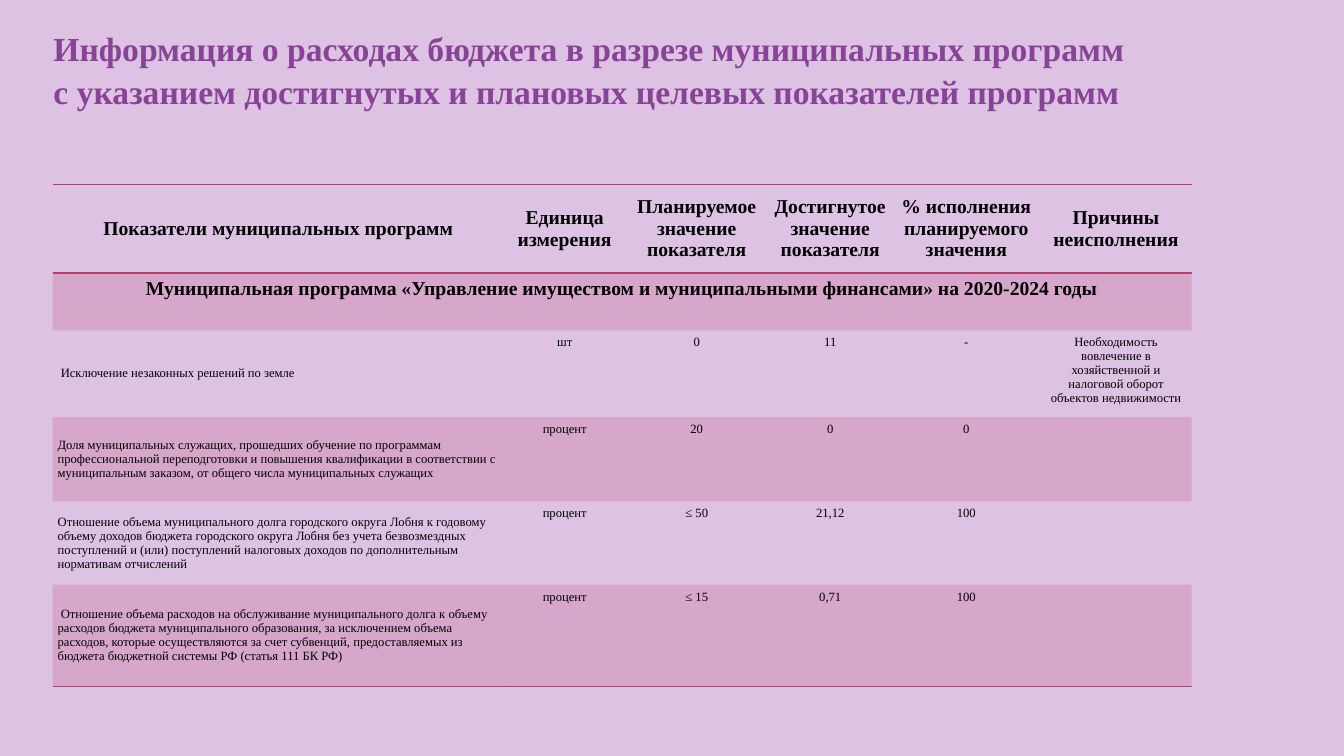
from dataclasses import dataclass

from lxml.etree import SubElement
from pptx import Presentation
from pptx.dml.color import RGBColor
from pptx.enum.text import MSO_ANCHOR, MSO_AUTO_SIZE, PP_ALIGN
from pptx.oxml.ns import qn
from pptx.util import Pt

COLORS = {"bg": "DEC2E4", "title": "874396", "text": "000000", "accent": "B83D68"}
FONT = "Times New Roman"
NO_STYLE = "{2D5ABB26-0587-4C30-8999-92F81FD0307C}"
COL_WIDTHS = (322.6, 86.4, 102.2, 88.6, 105.8, 108)


@dataclass
class Row:
    height: float
    texts: tuple[str, ...]
    heading: bool = False
    shaded: bool = False
    borders: tuple[str, ...] = ()


ROWS = [
    Row(63.4, ("Показатели муниципальных программ", "Единица измерения",
               "Планируемое значение показателя", "Достигнутое значение показателя",
               "% исполнения планируемого значения", "Причины неисполнения"),
        heading=True, borders=("lnT", "lnB")),
    Row(41, ("Муниципальная программа «Управление имуществом и муниципальными "
             "финансами» на 2020-2024 годы",), heading=True, shaded=True),
    Row(61.8, (" Исключение незаконных решений по земле", "шт", "0", "11", "-",
               "Необходимость вовлечение в хозяйственной и налоговой оборот "
               "объектов недвижимости")),
    Row(60.3, ("Доля муниципальных служащих, прошедших обучение по программам "
               "профессиональной переподготовки и повышения квалификации в соответствии "
               "с муниципальным заказом, от общего числа муниципальных служащих",
               "процент", "20", "0", "0", ""), shaded=True),
    Row(59.6, ("Отношение объема муниципального долга городского округа Лобня к годовому "
               "объему доходов бюджета городского округа Лобня без учета безвозмездных "
               "поступлений и (или) поступлений налоговых доходов по дополнительным "
               "нормативам отчислений", "процент", "≤ 50", "21,12", "100", "")),
    Row(72.7, (" Отношение объема расходов на обслуживание муниципального долга к объему "
               "расходов бюджета муниципального образования, за исключением объема "
               "расходов, которые осуществляются за счет субвенций, предоставляемых из "
               "бюджета бюджетной системы РФ (статья 111 БК РФ)",
               "процент", "≤ 15", "0,71", "100", ""), shaded=True, borders=("lnB",)),
]


def set_font(font, size: float, color: str, bold: bool) -> None:
    font.name, font.size, font.bold = FONT, Pt(size), bold
    font.color.rgb = RGBColor.from_string(COLORS[color])


def fill_cell(cell, row: Row) -> None:
    """Set the fill of a cell, then its border lines."""
    tc_pr = cell._tc.get_or_add_tcPr()
    if row.shaded:
        cell.fill.solid()
        cell.fill.fore_color.rgb = RGBColor.from_string(COLORS["accent"])
        clr = tc_pr.find(qn("a:solidFill")).find(qn("a:srgbClr"))
        SubElement(clr, qn("a:alpha"), val="20000")
    else:
        cell.fill.background()
    for i, side in enumerate(row.borders):
        ln = SubElement(tc_pr, qn(f"a:{side}"), w=str(Pt(1)))
        solid = SubElement(ln, qn("a:solidFill"))
        SubElement(solid, qn("a:srgbClr"), val=COLORS["accent"])
        tc_pr.insert(i, ln)


def write_cell(cell, text: str, row: Row, first: bool) -> None:
    cell.margin_left = cell.margin_right = Pt(3.6)
    cell.margin_top = cell.margin_bottom = Pt(3.6)
    spanning = len(row.texts) == 1
    middle = (row.heading or first) and not spanning
    cell.vertical_anchor = MSO_ANCHOR.MIDDLE if middle else MSO_ANCHOR.TOP
    p = cell.text_frame.paragraphs[0]
    p.alignment = PP_ALIGN.LEFT if first and not row.heading else PP_ALIGN.CENTER
    if text:
        r = p.add_run()
        r.text = text
        set_font(r.font, 14 if row.heading else 9, "text", row.heading)


def add_title(s) -> None:
    sp = s.shapes.title
    sp.left, sp.top, sp.width, sp.height = Pt(31), Pt(14.4), Pt(814.3), Pt(65.5)
    tf = sp.text_frame
    tf.word_wrap = True
    tf.auto_size = MSO_AUTO_SIZE.NONE
    tf.vertical_anchor = MSO_ANCHOR.TOP
    p = tf.paragraphs[0]
    p.alignment = PP_ALIGN.LEFT
    p.line_spacing = 1.07
    lines = ("Информация о расходах бюджета в разрезе муниципальных программ ",
             "с указанием достигнутых и плановых целевых показателей программ")
    for i, line in enumerate(lines):
        if i:
            p.add_line_break()
        r = p.add_run()
        r.text = line
        set_font(r.font, 24, "title", True)


def add_indicators(s) -> None:
    frame = s.shapes.add_table(len(ROWS), len(COL_WIDTHS), Pt(37.6), Pt(131.6),
                               Pt(sum(COL_WIDTHS)), Pt(sum(row.height for row in ROWS)))
    table = frame.table
    table.first_row = table.horz_banding = False
    table._tbl.tblPr.find(qn("a:tableStyleId")).text = NO_STYLE
    for col, width in zip(table.columns, COL_WIDTHS):
        col.width = Pt(width)
    for i, row in enumerate(ROWS):
        table.rows[i].height = Pt(row.height)
        if len(row.texts) == 1:
            table.cell(i, 0).merge(table.cell(i, len(COL_WIDTHS) - 1))
        for j, text in enumerate(row.texts):
            cell = table.cell(i, j)
            write_cell(cell, text, row, j == 0)
            fill_cell(cell, row)


def main() -> None:
    prs = Presentation()
    prs.slide_width, prs.slide_height = Pt(960), Pt(540)
    s = prs.slides.add_slide(prs.slide_layouts[5])

    # Background
    s.background.fill.solid()
    s.background.fill.fore_color.rgb = RGBColor.from_string(COLORS["bg"])

    # Title and table of indicators
    add_title(s)
    add_indicators(s)
    prs.save("out.pptx")


if __name__ == "__main__":
    main()
